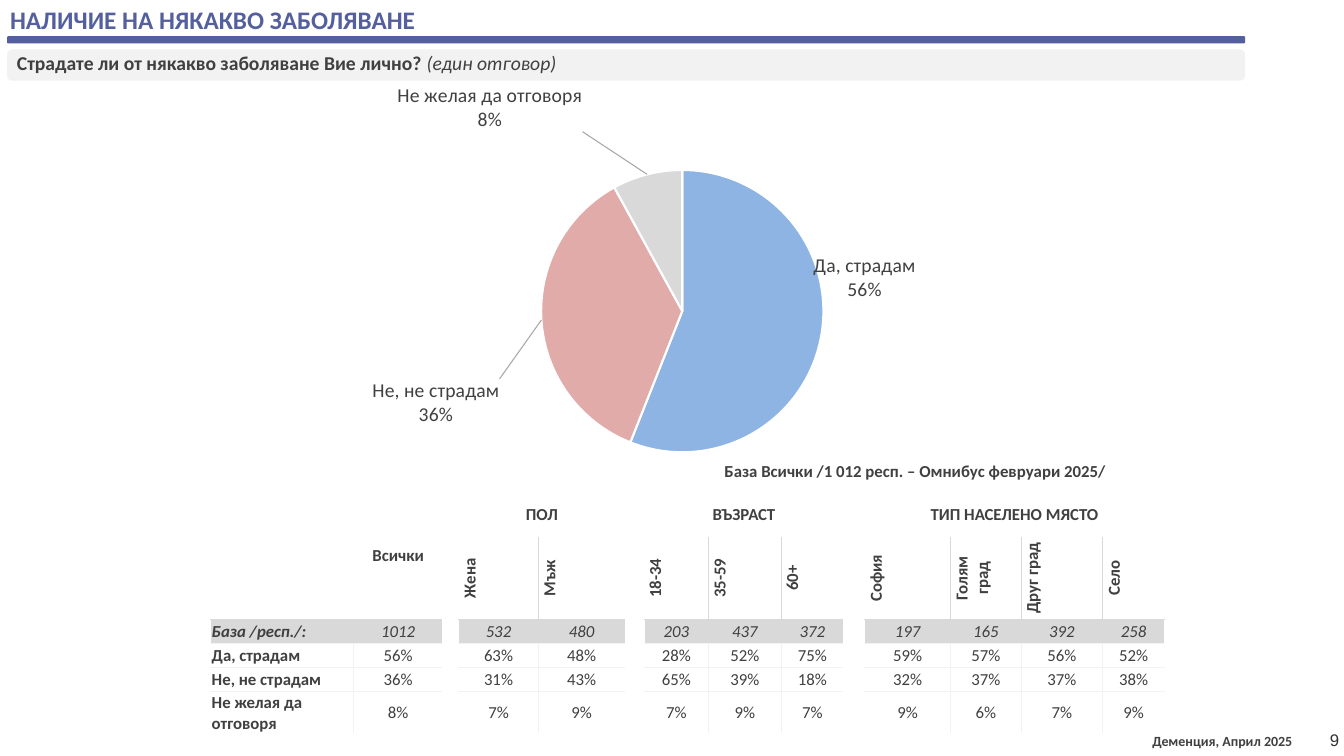
import pptx
import pptx.util
import pptx.chart.data
import pptx.dml.color
import pptx.enum.chart
import pptx.enum.shapes
import pptx.enum.text
import pptx.oxml
import pptx.oxml.ns
from lxml import etree

PX = 9144
ALIGN = pptx.enum.text.PP_ALIGN
MIDDLE = pptx.enum.text.MSO_ANCHOR.MIDDLE
DARK, GREY, PALE, WHITE = "404040", "D9D9D9", "F2F2F2", "FFFFFF"

ANSWERS = ["Да, страдам", "Не, не страдам", "Не желая да отговоря"]
SHARES = [0.56, 0.36, 0.08]
SLICE_COLORS = ["8EB4E3", "D99694", GREY]
LABEL_OFFSETS = [(-0.014, -0.197), (-0.038, 0.192), (-0.067, -0.086)]

GROUPS = [
    ("ПОЛ", ["Жена", "Мъж"]),
    ("ВЪЗРАСТ", ["18-34", "35-59", "60+"]),
    ("ТИП НАСЕЛЕНО МЯСТО", ["София", "Голям град", "Друг град", "Село"]),
]
RESULTS = [
    ("База /респ./:", ["1012", "532", "480", "203", "437", "372", "197", "165", "392", "258"]),
    (ANSWERS[0], ["56%", "63%", "48%", "28%", "52%", "75%", "59%", "57%", "56%", "52%"]),
    (ANSWERS[1], ["36%", "31%", "43%", "65%", "39%", "18%", "32%", "37%", "37%", "38%"]),
    (ANSWERS[2], ["8%", "7%", "9%", "7%", "9%", "7%", "9%", "6%", "7%", "9%"]),
]
COLUMN_WIDTHS = [142, 88, 16, 79, 86, 19, 64, 72, 62, 21, 85, 70, 81, 61]
ROW_HEIGHTS = [45, 50, 24, 24, 24, 37]
GAP_COLUMNS = [2, 5, 9]
INNER_EDGES = [WHITE, GREY, GREY, PALE, PALE, PALE]
BOTTOM_EDGES = [WHITE, GREY, PALE, PALE, PALE, WHITE]


def px(*lengths):
    return [pptx.util.Emu(length * PX) for length in lengths]


def rgb(value):
    return pptx.dml.color.RGBColor.from_string(value)


def write(paragraph, text, size=12, color=DARK, bold=False, italic=False, font="Calibri", align=None):
    if align is not None:
        paragraph.alignment = align
    run = paragraph.add_run()
    run.text = text
    run.font.size = pptx.util.Pt(size)
    run.font.name = font
    run.font.bold = bold
    run.font.italic = italic
    run.font.color.rgb = rgb(color)


def add_bar(slide, box, color):
    shape = slide.shapes.add_shape(pptx.enum.shapes.MSO_SHAPE.ROUNDED_RECTANGLE, *px(*box))
    shape.shadow.inherit = False
    shape.fill.solid()
    shape.fill.fore_color.rgb = rgb(color)
    shape.line.fill.background()


def add_box(slide, box):
    shape = slide.shapes.add_textbox(*px(*box))
    shape.text_frame.word_wrap = True
    return shape.text_frame.paragraphs[0]


def add_title(slide, text):
    title = slide.shapes.title
    title.left, title.top, title.width, title.height = px(0, 0, 1180, 39)
    title.text_frame.vertical_anchor = MIDDLE
    title.text_frame.auto_size = pptx.enum.text.MSO_AUTO_SIZE.NONE
    write(title.text_frame.paragraphs[0], text, size=18, color="545F9D", bold=True, align=ALIGN.LEFT)


def manual_layout(**settings):
    layout = pptx.oxml.parse_xml(f'<c:layout {pptx.oxml.ns.nsdecls("c")}><c:manualLayout/></c:layout>')
    for name, value in settings.items():
        etree.SubElement(layout[0], pptx.oxml.ns.qn(f"c:{name}")).set("val", str(value))
    return layout


def format_labels(labels):
    labels.number_format = "0%"
    labels.number_format_is_linked = False
    labels.show_value = labels.show_percentage = labels.show_category_name = True
    labels.font.size = pptx.util.Pt(12)
    labels.font.bold = True
    labels.font.name = "Calibri"
    labels.font.color.rgb = rgb(DARK)


def add_pie(slide):
    data = pptx.chart.data.CategoryChartData(number_format="0%")
    data.categories = ANSWERS
    data.add_series("Series 1", SHARES)
    chart = slide.shapes.add_chart(
        pptx.enum.chart.XL_CHART_TYPE.PIE, *px(163, 79, 937, 427), data).chart
    chart.has_legend = False
    chart.font.size = pptx.util.Pt(10)
    chart.font.name = "Arial"
    chart.font.color.rgb = rgb("000000")
    chart.plots[0].vary_by_categories = True
    write(chart.chart_title.text_frame.paragraphs[0],
          "База Всички /1 012 респ. – Омнибус февруари 2025/", bold=True)
    chart.chart_title.include_in_layout = False

    series = chart.plots[0].series[0]
    format_labels(series.data_labels)
    for index, answer in enumerate(ANSWERS):
        point = series.points[index]
        point.format.fill.solid()
        point.format.fill.fore_color.rgb = rgb(SLICE_COLORS[index])
        point.format.line.color.rgb = rgb(WHITE)
        point.format.line.width = pptx.util.Pt(1.5)
        label = point.data_label
        label.position = pptx.enum.chart.XL_LABEL_POSITION.OUTSIDE_END
        write(label.text_frame.paragraphs[0], answer, size=14)
        write(label.text_frame.add_paragraph(), f"{SHARES[index]:.0%}", size=14)

    root = chart.element
    no_color = root.xpath(f'.//c:dPt//a:srgbClr[@val="{SLICE_COLORS[1]}"]')[0]
    etree.SubElement(no_color, pptx.oxml.ns.qn("a:alpha")).set("val", "80000")
    for label, (x, y) in zip(root.xpath(".//c:dLbl"), LABEL_OFFSETS):
        label.insert(1, manual_layout(x=x, y=y))
    for flag in root.xpath(".//c:dLbl/c:showCatName | .//c:dLbl/c:showPercent | .//c:ser//c:showLeaderLines"):
        flag.set("val", "1")
    root.xpath(".//c:ser/c:dLbls")[0].append(pptx.oxml.parse_xml(
        f'<c:leaderLines {pptx.oxml.ns.nsdecls("c", "a")}><c:spPr><a:ln w="9525"><a:solidFill>'
        '<a:srgbClr val="A6A6A6"/></a:solidFill></a:ln></c:spPr></c:leaderLines>'))
    for layout in root.xpath(".//c:plotArea/c:layout | .//c:title/c:layout"):
        layout.getparent().remove(layout)
    root.xpath(".//c:plotArea")[0].insert(0, manual_layout(
        layoutTarget="inner", xMode="edge", yMode="edge", x=0.354, y=0.21, w=0.389, h=0.656))
    root.xpath(".//c:title/c:tx")[0].addnext(manual_layout(xMode="edge", yMode="edge", x=0.59, y=0.875))


def set_border(cell, side, color):
    line = pptx.oxml.parse_xml(
        f'<a:ln{side} {pptx.oxml.ns.nsdecls("a")} w="9525"><a:solidFill>'
        f'<a:srgbClr val="{color}"/></a:solidFill></a:ln{side}>')
    cell._tc.get_or_add_tcPr().append(line)


def inner_edge(row, column):
    outer = column in (0, len(COLUMN_WIDTHS)) or column in GAP_COLUMNS or column - 1 in GAP_COLUMNS
    return WHITE if outer or (row == 1 and column == 1) else INNER_EDGES[row]


def bottom_edge(row, column):
    return WHITE if row < 0 or column in GAP_COLUMNS else BOTTOM_EDGES[row]


def format_cell(cell, row, column):
    cell.margin_left, cell.margin_top, cell.margin_right, cell.margin_bottom = px(1, 1, 1, 0)
    cell.vertical_anchor = MIDDLE
    set_border(cell, "L", inner_edge(row, column))
    set_border(cell, "R", inner_edge(row, column + 1))
    set_border(cell, "T", bottom_edge(row - 1, column))
    set_border(cell, "B", bottom_edge(row, column))
    if row == 2 and column not in GAP_COLUMNS:
        cell.fill.solid()
        cell.fill.fore_color.rgb = rgb(GREY)
    else:
        cell.fill.background()
    ending = etree.SubElement(cell.text_frame.paragraphs[0]._p, pptx.oxml.ns.qn("a:endParaRPr"))
    ending.set("sz", "1200")


def add_results(slide):
    frame = slide.shapes.add_table(
        len(ROW_HEIGHTS), len(COLUMN_WIDTHS), *px(209, 488, sum(COLUMN_WIDTHS), sum(ROW_HEIGHTS)))
    table = frame.table
    table.first_row = table.horz_banding = False
    for column, width in zip(table.columns, px(*COLUMN_WIDTHS)):
        column.width = width
    for row, height in zip(table.rows, px(*ROW_HEIGHTS)):
        row.height = height
    for row in range(len(ROW_HEIGHTS)):
        for column in range(len(COLUMN_WIDTHS)):
            format_cell(table.cell(row, column), row, column)

    def fill_cell(row, column, text, align=ALIGN.CENTER, **style):
        write(table.cell(row, column).text_frame.paragraphs[0], text, align=align, **style)

    for column in (0, 1):
        table.cell(0, column).merge(table.cell(1, column))
    fill_cell(0, 1, "Всички", bold=True)
    for gap, (heading, names) in zip(GAP_COLUMNS, GROUPS):
        table.cell(0, gap + 1).merge(table.cell(0, gap + len(names)))
        fill_cell(0, gap + 1, heading, bold=True)
        for column, name in enumerate(names, gap + 1):
            table.cell(1, column)._tc.get_or_add_tcPr().set("vert", "vert270")
            fill_cell(1, column, name, bold=True)
    value_columns = [column for column in range(1, len(COLUMN_WIDTHS)) if column not in GAP_COLUMNS]
    for row, (name, values) in enumerate(RESULTS, 2):
        fill_cell(row, 0, name, align=ALIGN.LEFT, bold=True, italic=row == 2)
        for column, value in zip(value_columns, values):
            fill_cell(row, column, value, italic=row == 2)


def main():
    presentation = pptx.Presentation()
    presentation.slide_width, presentation.slide_height = px(1333, 750)
    slide = presentation.slides.add_slide(presentation.slide_layouts[5])
    add_bar(slide, (7, 36, 1228, 7), "545FA0")
    add_bar(slide, (7, 49, 1228, 31), PALE)
    write(add_box(slide, (1133, 722, 171, 27)), "Деменция, Април 2025", size=10, bold=True)
    write(add_box(slide, (1055, 719, 283, 28)), "9", color="333332", font="Arial", align=ALIGN.RIGHT)
    question = add_box(slide, (7, 46, 1180, 34))
    write(question, "Страдате ли от някакво заболяване Вие лично? ", size=14, bold=True, align=ALIGN.JUSTIFY)
    write(question, "(един отговор)", size=14, italic=True)
    question.space_after = pptx.util.Pt(6)
    add_title(slide, "НАЛИЧИЕ НА НЯКАКВО ЗАБОЛЯВАНЕ")
    add_pie(slide)
    add_results(slide)
    presentation.save("out.pptx")


if __name__ == "__main__":
    main()
